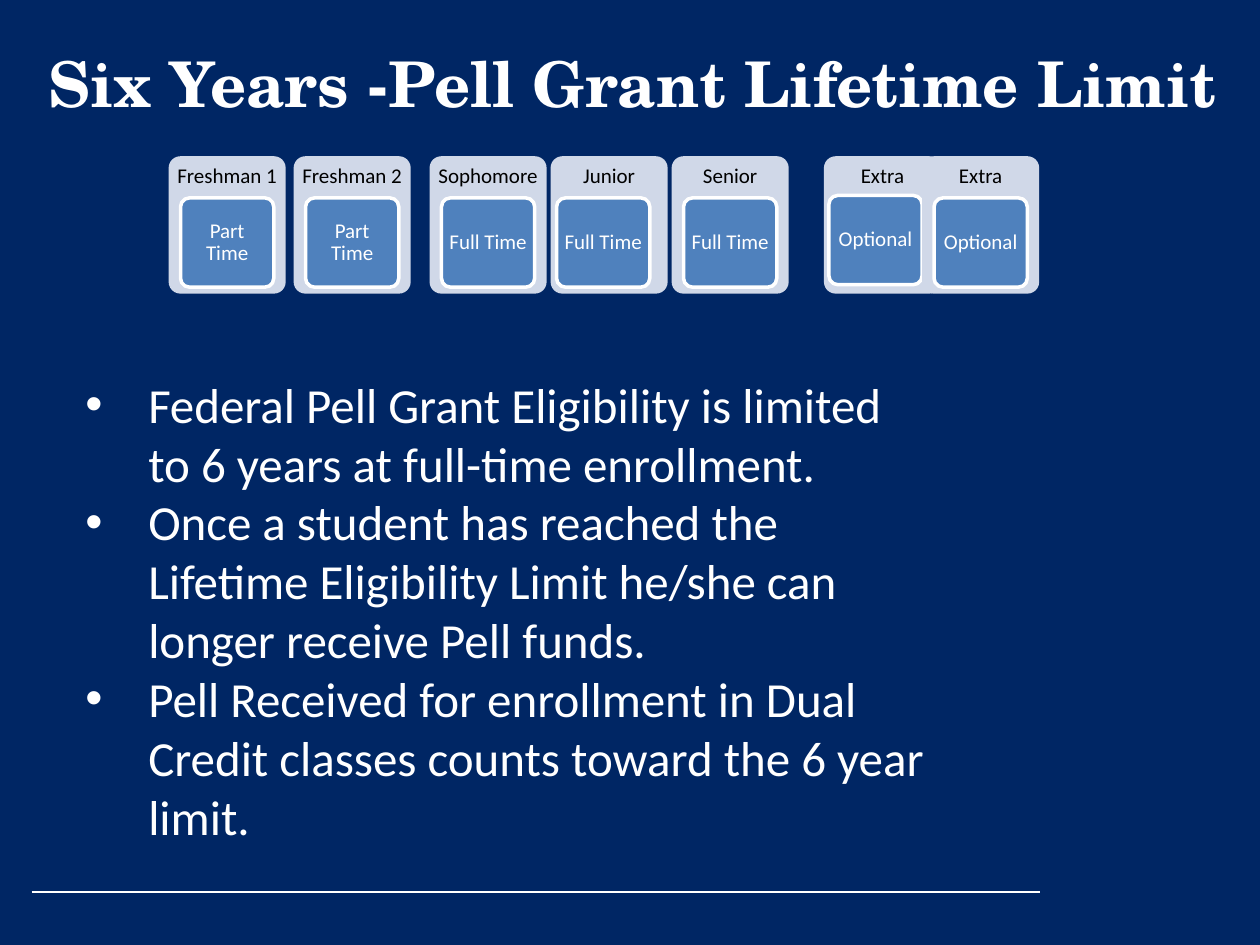
"""Build the slide on the Pell Grant lifetime limit."""
from lxml import etree
from pptx import Presentation
from pptx import util as u
from pptx.dml.color import RGBColor
from pptx.enum import shapes, text
from pptx.oxml.ns import qn

NAVY = RGBColor(0x00, 0x26, 0x64)
WHITE = RGBColor(0xFF, 0xFF, 0xFF)
BLACK = RGBColor(0x00, 0x00, 0x00)
PALE = RGBColor(0xD0, 0xD8, 0xE8)
BLUE = RGBColor(0x4F, 0x81, 0xBD)

CARD_TOP, CARD_WIDTH, CARD_HEIGHT = 3.15, 2.36, 2.77
HEADER_HEIGHT = 0.84
TILE_WIDTH, TILE_HEIGHT = 1.88, 1.8
TILE_MARGIN = 0.05

# Year, enrollment, card left, tile offset from the card, tile top
YEARS = [
    ("Freshman 1", "Part Time", 3.4, 0.24, 3.99),
    ("Freshman 2", "Part Time", 5.92, 0.24, 3.99),
    ("Sophomore", "Full Time", 8.66, 0.24, 3.99),
    ("Junior", "Full Time", 11.1, 0.12, 3.99),
    ("Senior", "Full Time", 13.54, 0.24, 3.99),
    ("Extra", "Optional", 16.61, 0.1, 3.94),
    ("Extra", "Optional", 18.59, 0.24, 3.99),
]

RULES = [
    "Federal Pell Grant Eligibility is limited to 6 years at full-time enrollment.",
    "Once a student has reached the Lifetime Eligibility Limit he/she can longer receive Pell funds.",
    "Pell Received for enrollment in Dual Credit classes counts toward the 6 year limit.",
]


def place(left, top, width, height):
    """Return a position and size in centimetres as lengths."""
    return [u.Cm(value) for value in (left, top, width, height)]


def add_bullet(para):
    """Give a paragraph a hanging round bullet."""
    props = para._p.get_or_add_pPr()
    props.set("marL", str(u.Cm(1.27)))
    props.set("indent", str(-u.Cm(1.27)))
    font = etree.SubElement(props, qn("a:buFont"))
    font.set("typeface", "Arial")
    etree.SubElement(props, qn("a:buChar")).set("char", "•")


def write(frame, lines, size, color=WHITE, font="Calibri", bold=False, bullet=False,
          align=text.PP_ALIGN.CENTER, anchor=text.MSO_ANCHOR.MIDDLE, spacing=None, inset=None):
    """Fill a text frame with one paragraph per line in one format."""
    frame.word_wrap = True
    frame.auto_size = text.MSO_AUTO_SIZE.NONE
    frame.vertical_anchor = anchor
    if inset is not None:
        frame.margin_left = frame.margin_right = u.Cm(inset)
        frame.margin_top = frame.margin_bottom = u.Cm(inset)
    for index, line in enumerate(lines):
        para = frame.add_paragraph() if index else frame.paragraphs[0]
        para.alignment = align
        if spacing:
            para.line_spacing = spacing
        if bullet:
            add_bullet(para)
        span = para.add_run()
        span.text = line
        span.font.name = font
        span.font.size = u.Pt(size)
        span.font.bold = bold
        span.font.color.rgb = color


def add_panel(group, area, fill, outline=None):
    """Add a rounded rectangle to a group."""
    panel = group.shapes.add_shape(shapes.MSO_SHAPE.ROUNDED_RECTANGLE, *area)
    panel.adjustments[0] = 0.1
    panel.shadow.inherit = False
    panel.fill.solid()
    panel.fill.fore_color.rgb = fill
    if outline is None:
        panel.line.fill.background()
    else:
        panel.line.color.rgb = outline
        panel.line.width = u.Pt(2)


def add_label(group, area, label, color, inset):
    """Add a centred label to a group."""
    box = group.shapes.add_textbox(*area)
    write(box.text_frame, [label], 12, color=color, spacing=0.9, inset=inset)


def add_year(group, year, enrollment, left, offset, tile_top):
    """Add the card of one year with its enrollment tile."""
    add_panel(group, place(left, CARD_TOP, CARD_WIDTH, CARD_HEIGHT), PALE)
    add_label(group, place(left, CARD_TOP, CARD_WIDTH, HEADER_HEIGHT), year, BLACK, 0.13)
    tile_left = left + offset
    add_panel(group, place(tile_left, tile_top, TILE_WIDTH, TILE_HEIGHT), BLUE, WHITE)
    inner = place(tile_left + TILE_MARGIN, tile_top + TILE_MARGIN,
                  TILE_WIDTH - 2 * TILE_MARGIN, TILE_HEIGHT - 2 * TILE_MARGIN)
    add_label(group, inner, enrollment, WHITE, 0.08)


def add_title(page, title):
    """Place and format the title placeholder."""
    box = page.shapes.title
    box.left, box.top, box.width, box.height = place(0.71, 0.18, 24.08, 2.97)
    write(box.text_frame, [title], 36, font="TeX Gyre Schola", bold=True, inset=0.1)


def add_rule_list(page, rules):
    """Add the bulleted list of rules."""
    box = page.shapes.add_textbox(*place(1.47, 7.42, 17.5, 9.83))
    write(box.text_frame, rules, 28, bullet=True,
          align=text.PP_ALIGN.LEFT, anchor=text.MSO_ANCHOR.TOP)


def add_footer_line(page):
    """Add the thin line at the foot of the slide."""
    start, end, height = u.Cm(0.64), u.Cm(20.96), u.Cm(17.98)
    line = page.shapes.add_connector(shapes.MSO_CONNECTOR.STRAIGHT, start, height, end, height)
    line.line.color.rgb = WHITE
    line.line.width = u.Pt(0.75)
    etree.SubElement(line._element.spPr, qn("a:effectLst"))


def main():
    """Build and save the deck."""
    deck = Presentation()
    deck.slide_width, deck.slide_height = u.Cm(25.4), u.Cm(19.05)
    page = deck.slides.add_slide(deck.slide_layouts[5])
    page.background.fill.solid()
    page.background.fill.fore_color.rgb = NAVY
    add_title(page, "Six Years -Pell Grant Lifetime Limit")
    add_rule_list(page, RULES)
    add_footer_line(page)
    group = page.shapes.add_group_shape()
    for year in YEARS:
        add_year(group, *year)
    deck.save("out.pptx")


if __name__ == "__main__":
    main()
